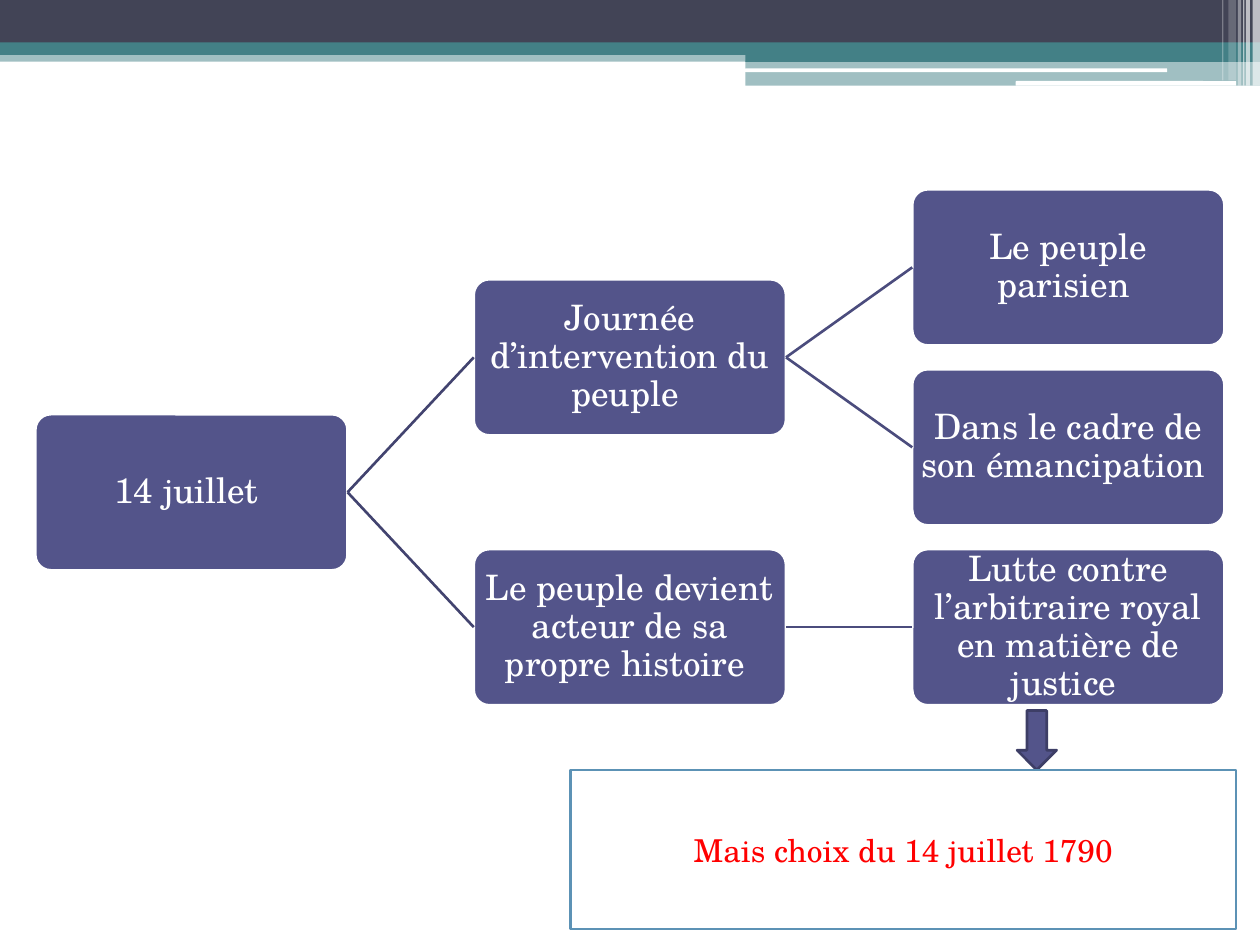
from lxml import etree
from pptx import Presentation
from pptx.dml.color import RGBColor
from pptx.enum import shapes, text
from pptx.oxml import ns
from pptx.util import Pt

FONT = "TeX Gyre Schola"
COLORS = {
    "white": "FFFFFF", "slate": "424456", "teal": "438086", "indigo": "53548A",
    "first_link": "42436F", "second_link": "4B4C7D", "arrow_edge": "3D3E66",
    "note_edge": "5C92B5", "red": "FF0000",
}
KIND = shapes.MSO_SHAPE
BOX_WIDTH, BOX_HEIGHT = 178.4, 89.2
TREE_LEFT, TREE_TOP = 20.2, 108.2
COLUMN_STEP, ROW_STEP = 250.55, 102.8

# left, top, width, height, colour, opacity in percent
BANDS = [
    (0, 28.8, 720, 6.5, "teal", 50),
    (0, 0, 720, 24.5, "slate", 100),
    (0, 24.2, 720, 7.2, "teal", 100),
    (426, 28.2, 294, 7.2, "teal", 100),
    (426, 34.7, 294, 14.2, "teal", 50),
]
HIGHLIGHTS = [(425.8, 39.1, 241.2, 2.2), (580.4, 46.3, 126, 2.7)]
# left, width, height, opacity in percent
STRIPES = [
    (715.8, 4.2, 49, 65), (712, 2.2, 49, 65), (710.4, 0.7, 49, 60),
    (707.3, 2, 49, 40), (702, 4.3, 46, 20), (698.4, 0.7, 46, 30),
]
# key: column, row, wording
BOXES = {
    "date": (0, 1.25, "14 juillet "),
    "day": (1, 0.5, "Journée d’intervention du peuple "),
    "parisians": (2, 0, "Le peuple parisien "),
    "emancipation": (2, 1, "Dans le cadre de son émancipation "),
    "actor": (1, 2, "Le peuple devient acteur de sa propre histoire "),
    "justice": (2, 2, "Lutte contre l’arbitraire royal en matière de justice "),
}
LINKS = [
    ("date", "day", "first_link"), ("date", "actor", "first_link"),
    ("day", "parisians", "second_link"), ("day", "emancipation", "second_link"),
    ("actor", "justice", "second_link"),
]


def rgb(name):
    return RGBColor.from_string(COLORS[name])


def add_block(slide, kind, frame, fill, edge=None, opacity=100):
    block = slide.shapes.add_shape(kind, *map(Pt, frame))
    block.shadow.inherit = False
    block.fill.solid()
    block.fill.fore_color.rgb = rgb(fill)
    if opacity < 100:
        color = block.fill._xPr.find(".//" + ns.qn("a:srgbClr"))
        etree.SubElement(color, ns.qn("a:alpha"), val=str(opacity * 1000))
    if edge:
        block.line.color.rgb = rgb(edge)
        block.line.width = Pt(1.5)
    else:
        block.line.fill.background()
    return block


def write(block, wording, size, color, spacing=None):
    frame = block.text_frame
    frame.word_wrap = True
    frame.vertical_anchor = text.MSO_ANCHOR.MIDDLE
    paragraph = frame.paragraphs[0]
    paragraph.text = wording
    paragraph.alignment = text.PP_ALIGN.CENTER
    if spacing:
        paragraph.line_spacing = spacing
    paragraph.font.name = FONT
    paragraph.font.size = Pt(size)
    paragraph.font.color.rgb = rgb(color)


def add_banner(slide):
    for *frame, color, opacity in BANDS:
        add_block(slide, KIND.RECTANGLE, frame, color, opacity=opacity)
    for frame in HIGHLIGHTS:
        add_block(slide, KIND.ROUNDED_RECTANGLE, frame, "white")
    for left, width, height, opacity in STRIPES:
        add_block(slide, KIND.RECTANGLE, (left, 0, width, height), "white", opacity=opacity)


def add_tree_box(slide, column, row, wording):
    frame = (TREE_LEFT + column * COLUMN_STEP, TREE_TOP + row * ROW_STEP,
             BOX_WIDTH, BOX_HEIGHT)
    box = add_block(slide, KIND.ROUNDED_RECTANGLE, frame, "indigo", "white")
    box.adjustments[0] = 0.1
    write(box, wording, 20, "white", 0.9)
    inner = box.text_frame
    inner.margin_left = inner.margin_right = Pt(0.7)
    inner.margin_top = inner.margin_bottom = Pt(0.7)
    return box


def add_link(slide, parent, child, color):
    """Join the right side of parent to the left side of child."""
    link = slide.shapes.add_connector(shapes.MSO_CONNECTOR.STRAIGHT, 0, 0, 0, 0)
    link.begin_connect(parent, 3)
    link.end_connect(child, 1)
    link.line.color.rgb = rgb(color)
    link.line.width = Pt(1.5)
    etree.SubElement(link._element.spPr, ns.qn("a:effectLst"))


def main():
    deck = Presentation()
    deck.slide_width, deck.slide_height = Pt(720), Pt(540)
    slide = deck.slides.add_slide(deck.slide_layouts[6])
    add_banner(slide)
    boxes = {key: add_tree_box(slide, *box) for key, box in BOXES.items()}
    for parent, child, color in LINKS:
        add_link(slide, boxes[parent], boxes[child], color)
    add_block(slide, KIND.DOWN_ARROW, (581.2, 406, 22.6, 34), "indigo", "arrow_edge")
    note = add_block(slide, KIND.RECTANGLE, (326, 440, 380.2, 90.8), "white", "note_edge")
    write(note, "Mais choix du 14 juillet 1790", 18, "red")
    deck.save("out.pptx")


if __name__ == "__main__":
    main()
